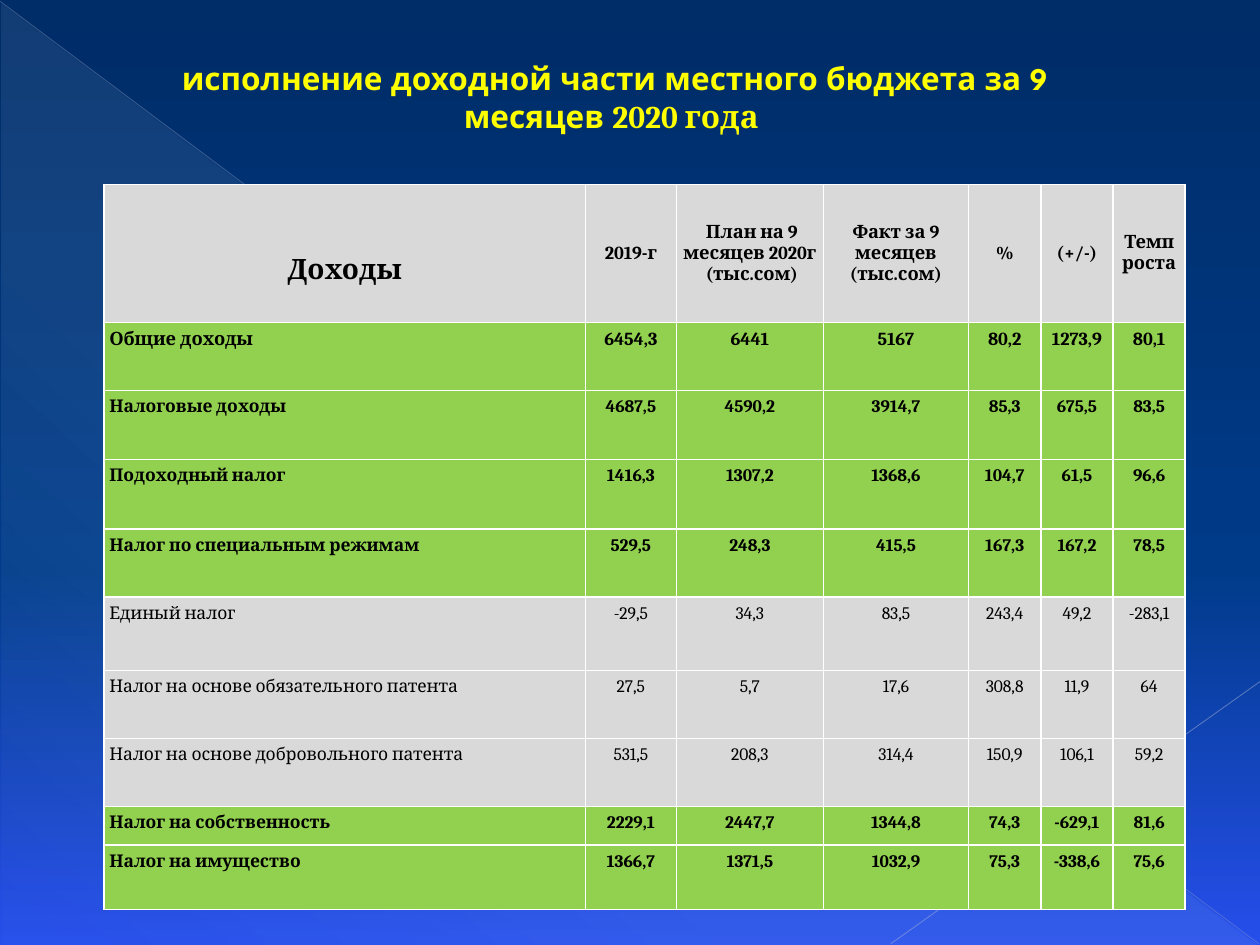
from typing import NamedTuple

from lxml.etree import SubElement
from pptx import Presentation
from pptx.dml.color import RGBColor
from pptx.enum.shapes import MSO_CONNECTOR, MSO_SHAPE
from pptx.enum.text import MSO_ANCHOR, PP_ALIGN
from pptx.oxml.ns import qn
from pptx.util import Pt

GREY, GREEN, BLACK, WHITE, YELLOW = "D9D9D9", "92D050", "000000", "FFFFFF", "FFFF00"
SERIF, SANS = "Cambria", "League Spartan"


class Stop(NamedTuple):
    pos: int
    hue: str
    alpha: int = 100


class Ray(NamedTuple):
    x1: float
    y1: float
    x2: float
    y2: float
    hue: str
    width: float
    alpha: int


class Row(NamedTuple):
    height: float
    fill: str
    size: float
    bold: bool
    texts: list[str]


WIDTHS = [275, 52, 84, 83, 41.3, 41.3, 41.3]
HEAD = Row(78.8, GREY, 10.5, True, [
    "Доходы", "2019-г", " План на 9 месяцев 2020г\n (тыс.сом)",
    "Факт за 9 месяцев\n(тыс.сом)", "%", "(+/-)", "Темп роста"])
ROWS = [
    HEAD,
    Row(38.9, GREEN, 10.5, True,
        ["Общие доходы", "6454,3", "6441", "5167", "80,2", "1273,9", "80,1"]),
    Row(39.4, GREEN, 10, True,
        ["Налоговые доходы", "4687,5", "4590,2", "3914,7", "85,3", "675,5", "83,5"]),
    Row(39.8, GREEN, 10, True,
        ["Подоходный налог", "1416,3", "1307,2", "1368,6", "104,7", "61,5", "96,6"]),
    Row(38.9, GREEN, 10, True,
        ["Налог по специальным режимам", "529,5", "248,3", "415,5", "167,3", "167,2", "78,5"]),
    Row(41.9, GREY, 10, False,
        ["Единый налог", "-29,5", "34,3", "83,5", "243,4", "49,2", "-283,1"]),
    Row(38.9, GREY, 10, False,
        ["Налог на основе обязательного патента", "27,5", "5,7", "17,6", "308,8", "11,9", "64"]),
    Row(38.9, GREY, 10, False,
        ["Налог на основе добровольного патента", "531,5", "208,3", "314,4", "150,9", "106,1",
         "59,2"]),
    Row(22, GREEN, 10, True,
        ["Налог на собственность", "2229,1", "2447,7", "1344,8", "74,3", "-629,1", "81,6"]),
    Row(36.9, GREEN, 10, True,
        ["Налог на имущество", "1366,7", "1371,5", "1032,9", "75,3", "-338,6", "75,6"]),
]


def rgb(hue: str) -> RGBColor:
    return RGBColor.from_string(hue)


def add_hue(node, hue: str, alpha: int = 100) -> None:
    clr = SubElement(node, qn("a:srgbClr"), val=hue)
    if alpha < 100:
        SubElement(clr, qn("a:alpha"), val=str(alpha * 1000))


def blend(fill, root, stops: list[Stop], angle: int) -> None:
    """Give a fill, found below root, a linear gradient."""
    fill.gradient()
    grad = next(root.iter(qn("a:gradFill")))
    grad.find(qn("a:lin")).set("ang", str(angle * 60000))
    items = grad.find(qn("a:gsLst"))
    items.clear()
    for stop in stops:
        node = SubElement(items, qn("a:gs"), pos=str(stop.pos * 1000))
        add_hue(node, stop.hue, stop.alpha)


def add_ray(slide, ray: Ray) -> None:
    line = slide.shapes.add_connector(
        MSO_CONNECTOR.STRAIGHT, Pt(ray.x1), Pt(ray.y1), Pt(ray.x2), Pt(ray.y2))
    line.line.width = Pt(ray.width)
    line.line.color.rgb = rgb(ray.hue)
    clr = next(line._element.spPr.iter(qn("a:srgbClr")))
    SubElement(clr, qn("a:alpha"), val=str(ray.alpha * 1000))
    SubElement(line._element.spPr, qn("a:effectLst"))


def add_run(para, text: str, face: str, size: float, hue: str, bold: bool = True) -> None:
    run = para.add_run()
    run.text = text
    run.font.name = face
    run.font.size = Pt(size)
    run.font.bold = bold
    run.font.color.rgb = rgb(hue)


def add_edges(cell) -> None:
    props = cell._tc.get_or_add_tcPr()
    for spot, side in enumerate(("a:lnL", "a:lnR", "a:lnT", "a:lnB")):
        edge = props.makeelement(qn(side), {"w": str(Pt(1))})
        add_hue(SubElement(edge, qn("a:solidFill")), WHITE)
        props.insert(spot, edge)


def fill_cell(cell, text: str, row: Row, first: bool) -> None:
    head = row is HEAD
    title = head and first
    cell.margin_left = cell.margin_right = Pt(3)
    cell.margin_top = Pt(22.5 if title else 3.6)
    cell.margin_bottom = Pt(3.6)
    cell.vertical_anchor = MSO_ANCHOR.MIDDLE if head else MSO_ANCHOR.TOP
    cell.fill.solid()
    cell.fill.fore_color.rgb = rgb(row.fill)
    add_edges(cell)
    frame = cell.text_frame
    for num, part in enumerate(text.split("\n")):
        para = frame.add_paragraph() if num else frame.paragraphs[0]
        para.alignment = PP_ALIGN.LEFT if first and not head else PP_ALIGN.CENTER
        add_run(para, part, SERIF, 16 if title else row.size, BLACK, row.bold)


def add_grid(slide) -> None:
    frame = slide.shapes.add_table(
        len(ROWS), len(WIDTHS), Pt(59.5), Pt(105.5),
        Pt(sum(WIDTHS)), Pt(sum(row.height for row in ROWS)))
    table = frame.table
    table.first_row = table.horz_banding = False
    for col, width in zip(table.columns, WIDTHS):
        col.width = Pt(width)
    for line, row in zip(table.rows, ROWS):
        line.height = Pt(row.height)
        for num, (cell, text) in enumerate(zip(line.cells, row.texts)):
            fill_cell(cell, text, row, num == 0)


def main() -> None:
    deck = Presentation()
    deck.slide_width, deck.slide_height = Pt(720), Pt(540)
    slide = deck.slides.add_slide(deck.slide_layouts[6])

    # Backdrop
    blend(slide.background.fill, slide._element,
          [Stop(0, "002C67"), Stop(60, "003B89"), Stop(100, "264EEB")], 90)
    wedge = slide.shapes.add_shape(
        MSO_SHAPE.RIGHT_TRIANGLE, Pt(0.7), Pt(1.4), Pt(718.6), Pt(538.6))
    wedge.shadow.inherit = False
    wedge.line.fill.background()
    blend(wedge.fill, wedge._element,
          [Stop(0, "C6E7FC", 10), Stop(70, "C6E7FC", 8), Stop(100, "C6E7FC", 1)], 133)
    add_ray(slide, Ray(0, 0.7, 719.3, 539.3, "AAB1D3", 0.39, 35))
    add_ray(slide, Ray(720, 389.5, 509, 539.3, "B4BAD7", 0.47, 45))

    # Title
    box = slide.shapes.add_textbox(Pt(76.3), Pt(28), Pt(550), Pt(54.7))
    frame = box.text_frame
    frame.word_wrap = True
    frame.vertical_anchor = MSO_ANCHOR.MIDDLE
    para = frame.paragraphs[0]
    para.alignment = PP_ALIGN.CENTER
    add_run(para, "исполнение доходной части местного бюджета за 9 месяцев ", SANS, 18, YELLOW)
    add_run(para, "2020 года ", SERIF, 18, YELLOW)

    # Income table
    add_grid(slide)
    deck.save("out.pptx")


if __name__ == "__main__":
    main()
